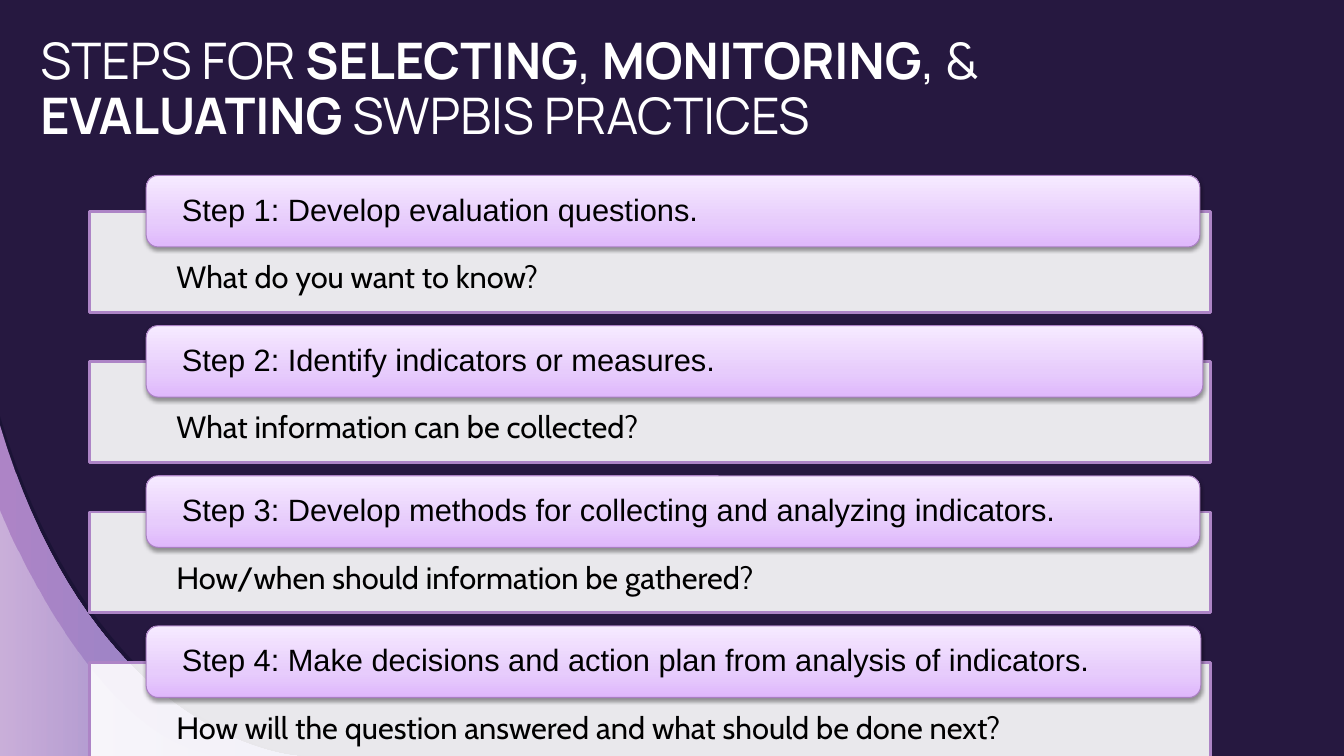
from lxml.etree import SubElement
from pptx import Presentation
from pptx.dml.color import RGBColor
from pptx.enum.shapes import MSO_SHAPE as Preset
from pptx.enum.text import MSO_ANCHOR as Anchor
from pptx.oxml.ns import qn
from pptx.util import Emu, Pt

PX = 9144

COLORS = {
    "night": "261840",
    "swoosh_shadow": "12102F",
    "orchid": "AD84C6",
    "periwinkle": "8784C7",
    "white": "FFFFFF",
    "black": "000000",
    "header_deep": "DFB7FC",
    "header_mid": "E7CCFC",
    "header_pale": "F6EAFF",
    "header_edge": "AA7FC3",
}

TITLE = [
    ("STEPS FOR ", False),
    ("SELECTING", True),
    (", ", False),
    ("MONITORING", True),
    (", & ", False),
    ("EVALUATING", True),
    (" SWPBIS PRACTICES", False),
]

STEPS = [
    ("Step 1: Develop evaluation questions.", "What do you want to know?", 1045),
    ("Step 2: Identify indicators or measures.", "What information can be collected?", 1048),
    ("Step 3: Develop methods for collecting and analyzing indicators.",
     "How/when should information be gathered?", 1045),
    ("Step 4: Make decisions and action plan from analysis of indicators.",
     "How will the question answered and what should be done next?", 1046),
]
STEP_PITCH = 149

SWOOSHES = [
    ([(0, 413), (98, 739), (303, 750), (303, 750)], [(0, "swoosh_shadow", 54)]),
    ([(0, 422), (95, 739), (295, 750), (295, 750)],
     [(0, "orchid", 100), (100, "periwinkle", 100)]),
    ([(0, 506), (0, 506), (91, 735), (216, 750)],
     [(0, "white", 36), (100, "white", 0)]),
]
HEADER_STOPS = [(0, "header_deep", 100), (35, "header_mid", 100), (100, "header_pale", 100)]

TITLE_FRAME = {"word_wrap": True, "vertical_anchor": Anchor.TOP,
               "margin_left": 13, "margin_top": 13, "margin_right": 13, "margin_bottom": 13}
QUESTION_FRAME = {"word_wrap": True, "vertical_anchor": Anchor.TOP,
                  "margin_left": 86, "margin_top": 50, "margin_right": 86, "margin_bottom": 17}
HEADER_FRAME = {"word_wrap": True, "vertical_anchor": Anchor.MIDDLE,
                "margin_left": 32, "margin_top": 0, "margin_right": 32, "margin_bottom": 0}
TITLE_FONT = {"name": "Manrope", "size": Pt(36)}
QUESTION_FONT = {"name": "Cabin", "size": Pt(22)}
HEADER_FONT = {"name": "Arial", "size": Pt(22)}


def px(*lengths):
    return [Emu(length * PX) for length in lengths]


def rgb(color):
    return RGBColor.from_string(COLORS[color])


def add_color(parent, color, opacity):
    node = SubElement(parent, qn("a:srgbClr"), val=COLORS[color])
    SubElement(node, qn("a:alpha"), val=str(opacity * 1000))


def paint(shape, stops, angle=0):
    shape.shadow.inherit = False
    shape.fill.solid()
    shape.fill.fore_color.rgb = rgb(stops[0][1])
    solid = shape._element.spPr.find(qn("a:solidFill"))
    if len(stops) == 1:
        solid.clear()
        add_color(solid, *stops[0][1:])
        return
    gradient = solid.makeelement(qn("a:gradFill"), {"rotWithShape": "1"})
    stop_list = SubElement(gradient, qn("a:gsLst"))
    for position, color, opacity in stops:
        stop = SubElement(stop_list, qn("a:gs"), pos=str(position * 1000))
        add_color(stop, color, opacity)
    SubElement(gradient, qn("a:lin"), ang=str(angle * 60000), scaled="0")
    solid.getparent().replace(solid, gradient)


def outline(shape, color, width):
    shape.line.color.rgb = rgb(color)
    shape.line.width = Pt(width)


def cast_shadow(shape):
    effects = shape._element.spPr.find(qn("a:effectLst"))
    shadow = SubElement(effects, qn("a:outerShdw"), blurRad=str(Pt(3.1)), dist=str(Pt(1.6)),
                        dir=str(90 * 60000), algn="t", rotWithShape="0")
    add_color(shadow, "black", 38)


def write(shape, runs, frame_format, font_format, color):
    frame = shape.text_frame
    for name, value in frame_format.items():
        setattr(frame, name, Emu(value * PX) if name.startswith("margin") else value)
    paragraph = frame.paragraphs[0]
    paragraph.alignment = 1
    paragraph.line_spacing = 0.9
    for text, bold in runs:
        run = paragraph.add_run()
        run.text = text
        for name, value in {**font_format, "bold": bold}.items():
            setattr(run.font, name, value)
        run.font.color.rgb = rgb(color)


def curve_points(controls, segments=40):
    for index in range(segments + 1):
        t = index / segments
        weights = ((1 - t) ** 3, 3 * t * (1 - t) ** 2, 3 * t ** 2 * (1 - t), t ** 3)
        yield tuple(round(PX * sum(w * point[axis] for w, point in zip(weights, controls)))
                    for axis in (0, 1))


def add_swoosh(slide, controls, stops):
    start, *curve = curve_points(controls)
    builder = slide.shapes.build_freeform(*start, scale=1.0)
    builder.add_line_segments(curve + [(0, 750 * PX)], close=True)
    swoosh = builder.convert_to_shape()
    paint(swoosh, stops)
    swoosh.line.fill.background()


def add_title(slide):
    title = slide.shapes.add_textbox(*px(27, 23, 1200, 125))
    write(title, TITLE, TITLE_FRAME, TITLE_FONT, "white")


def add_step(slide, index, heading, question, header_width):
    offset = index * STEP_PITCH
    panel = slide.shapes.add_shape(Preset.RECTANGLE, *px(89, 210 + offset, 1112, 100))
    paint(panel, [(0, "white", 90)])
    outline(panel, "orchid", 2)
    write(panel, [(question, False)], QUESTION_FRAME, QUESTION_FONT, "black")

    header = slide.shapes.add_shape(Preset.ROUNDED_RECTANGLE,
                                    *px(145, 174 + offset, header_width, 71))
    paint(header, HEADER_STOPS, 270)
    outline(header, "header_edge", 0.75)
    cast_shadow(header)
    write(header, [(heading, False)], HEADER_FRAME, HEADER_FONT, "black")


def main():
    deck = Presentation()
    deck.slide_width, deck.slide_height = px(1333, 750)
    slide = deck.slides.add_slide(deck.slide_layouts[6])
    slide.background.fill.solid()
    slide.background.fill.fore_color.rgb = rgb("night")
    for controls, stops in SWOOSHES:
        add_swoosh(slide, controls, stops)
    add_title(slide)
    for index, step in enumerate(STEPS):
        add_step(slide, index, *step)
    deck.save("out.pptx")


if __name__ == "__main__":
    main()
